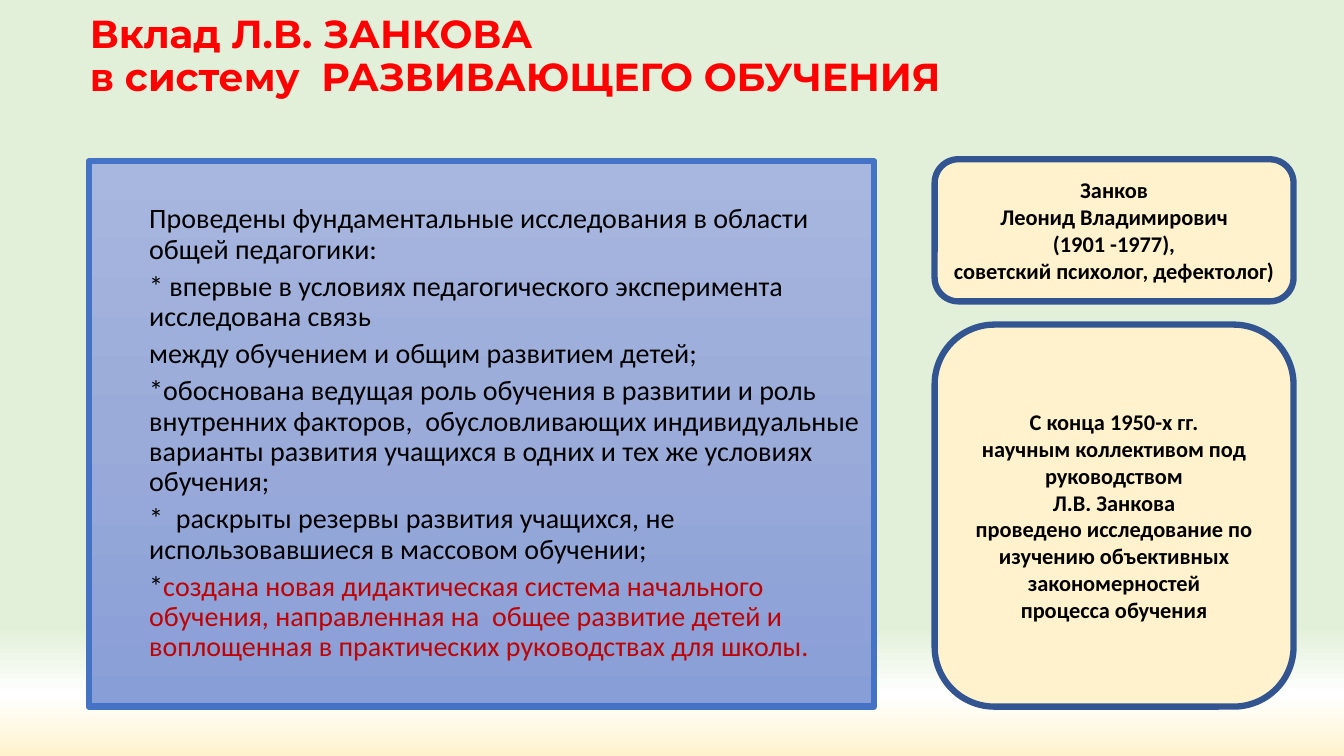
from dataclasses import dataclass

from lxml.etree import SubElement
from pptx import Presentation
from pptx.dml.color import RGBColor
from pptx.enum.shapes import MSO_SHAPE
from pptx.enum.text import MSO_ANCHOR, MSO_AUTO_SIZE, PP_ALIGN
from pptx.oxml.ns import qn
from pptx.util import Inches, Pt


@dataclass(frozen=True)
class Theme:
    head: str = "Montserrat"
    font: str = "Calibri"
    head_size: float = 27.9
    body_size: int = 20
    card_size: int = 16
    border: float = 4.5
    red: str = "FF0000"
    accent: str = "C00000"
    ink: str = "000000"
    blue: str = "4472C4"
    navy: str = "325491"
    cream: str = "FFF2CC"
    sky: tuple = ((83, "E2F0D9"), (92, "FFFFFF"), (100, "FFF2CC"))
    panel: tuple = ((0, "A8B7DF"), (50, "9AABD9"), (100, "889ED7"))


TITLE = "Вклад Л.В. ЗАНКОВА\vв систему  РАЗВИВАЮЩЕГО ОБУЧЕНИЯ"
POINTS = [
    "Проведены фундаментальные исследования в области общей педагогики:",
    "* впервые в условиях педагогического эксперимента исследована связь",
    "между обучением и общим развитием детей;",
    "*обоснована ведущая роль обучения в развитии и роль внутренних факторов,  "
    "обусловливающих индивидуальные варианты развития учащихся в одних и тех же "
    "условиях обучения;",
    "*  раскрыты резервы развития учащихся, не использовавшиеся в массовом обучении;",
]
RESULT = (
    "создана новая дидактическая система начального обучения, направленная на  "
    "общее развитие детей и воплощенная в практических руководствах для школы."
)
PERSON = [
    "Занков",
    "Леонид Владимирович",
    "(1901 -1977),",
    "советский психолог, дефектолог)",
]
STUDY = [
    "С конца 1950-х гг.",
    "научным коллективом под руководством",
    "Л.В. Занкова",
    "проведено исследование по изучению объективных закономерностей",
    "процесса обучения",
]


class Deck:
    def __init__(self, theme):
        self.theme = theme
        self.prs = Presentation()
        self.prs.slide_width = Inches(13.33)
        self.prs.slide_height = Inches(7.5)
        self.slide = self.prs.slides.add_slide(self.prs.slide_layouts[1])

    def place(self, shape, box):
        shape.left, shape.top, shape.width, shape.height = map(Inches, box)

    def blend(self, fill, stops):
        """Fill from top to bottom with any number of colour stops."""
        fill.gradient()
        fill.gradient_angle = 270
        group = fill.gradient_stops[0]._gs.getparent()
        for old in list(group):
            group.remove(old)
        for pos, color in stops:
            stop = SubElement(group, qn("a:gs"), pos=str(pos * 1000))
            SubElement(stop, qn("a:srgbClr"), val=color)

    def edge(self, shape, color):
        shape.line.color.rgb = RGBColor.from_string(color)
        shape.line.width = Pt(self.theme.border)

    def style(self, para, name, size, color, bold=False):
        font = para.font
        font.name, font.size, font.bold = name, Pt(size), bold
        font.color.rgb = RGBColor.from_string(color)

    def title(self, text, box):
        shape = self.slide.shapes.title
        self.place(shape, box)
        frame = shape.text_frame
        frame.text = text
        frame.auto_size = MSO_AUTO_SIZE.NONE
        frame.vertical_anchor = MSO_ANCHOR.TOP
        para = frame.paragraphs[0]
        para.alignment = PP_ALIGN.LEFT
        para.line_spacing = 0.9
        self.style(para, self.theme.head, self.theme.head_size, self.theme.red, True)

    def body(self, points, result, box):
        """List the points, then a starred result in the accent colour."""
        theme = self.theme
        shape = self.slide.placeholders[1]
        self.place(shape, box)
        self.blend(shape.fill, theme.panel)
        self.edge(shape, theme.blue)
        frame = shape.text_frame
        frame.auto_size = MSO_AUTO_SIZE.NONE
        frame.margin_top = Inches(0.43)
        frame.text = "\n".join([*points, "*"])
        for index, para in enumerate(frame.paragraphs):
            para.line_spacing = 0.9
            para.space_before = Pt(5 if index else 0)
            props = para._p.get_or_add_pPr()
            props.set("marL", str(Inches(0.5)))
            props.set("indent", "0")
            SubElement(props, qn("a:buNone"))
            self.style(para, theme.font, theme.body_size, theme.ink)
        run = frame.paragraphs[-1].add_run()
        run.text = result
        run.font.color.rgb = RGBColor.from_string(theme.accent)

    def card(self, lines, box):
        theme = self.theme
        shape = self.slide.shapes.add_shape(
            MSO_SHAPE.ROUNDED_RECTANGLE, *map(Inches, box)
        )
        shape.shadow.inherit = False
        shape.fill.solid()
        shape.fill.fore_color.rgb = RGBColor.from_string(theme.cream)
        self.edge(shape, theme.navy)
        frame = shape.text_frame
        frame.word_wrap = True
        frame.vertical_anchor = MSO_ANCHOR.MIDDLE
        frame.text = "\n".join(lines)
        for para in frame.paragraphs:
            para.alignment = PP_ALIGN.CENTER
            self.style(para, theme.font, theme.card_size, theme.ink, True)


def main():
    theme = Theme()
    deck = Deck(theme)
    deck.blend(deck.slide.background.fill, theme.sky)
    deck.title(TITLE, (0.79, 0.1, 11.3, 1.24))
    deck.body(POINTS, RESULT, (0.88, 1.6, 7.79, 5.41))
    deck.card(STUDY, (9.27, 3.22, 3.56, 3.79))
    deck.card(PERSON, (9.27, 1.58, 3.56, 1.41))
    deck.prs.save("out.pptx")


if __name__ == "__main__":
    main()
